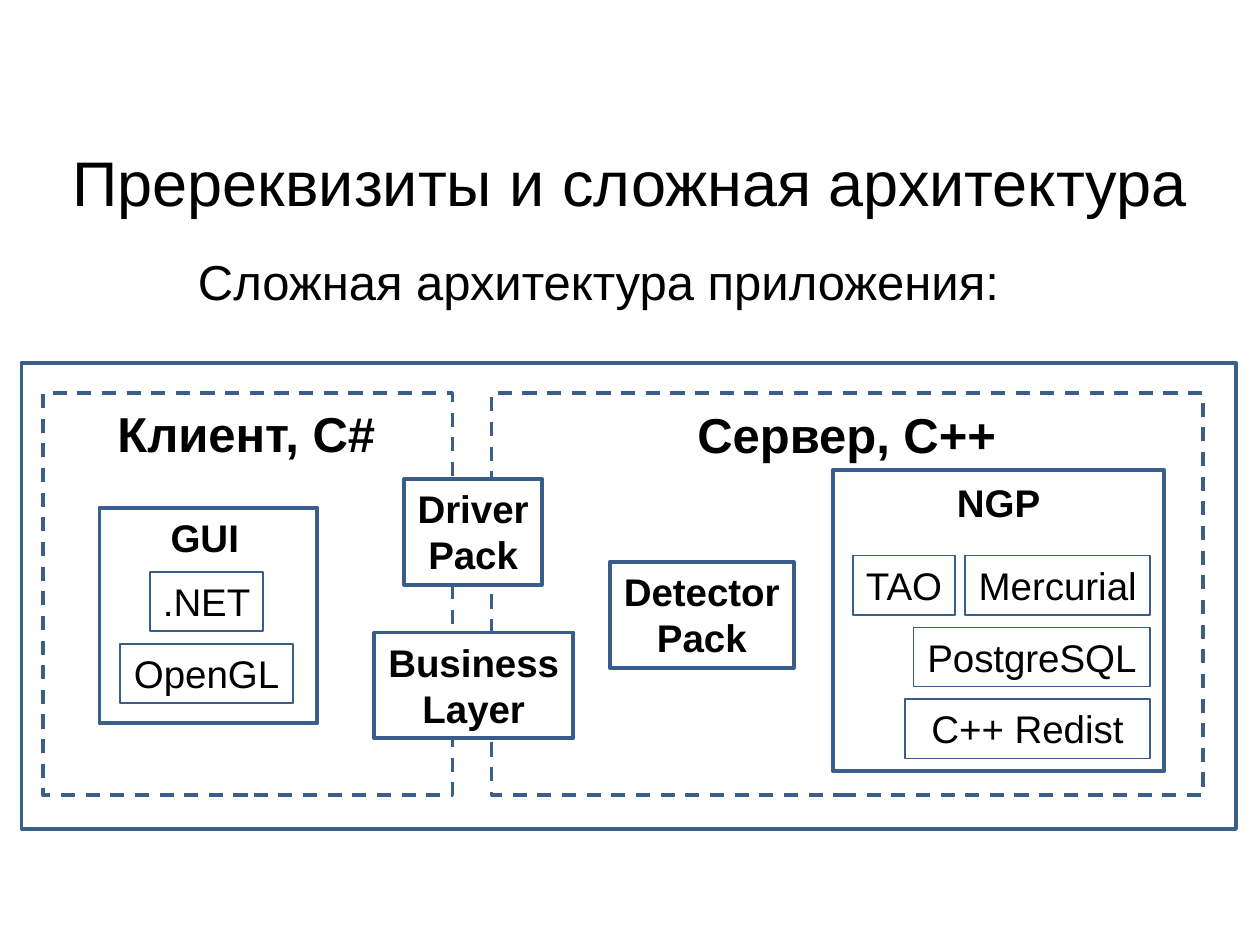
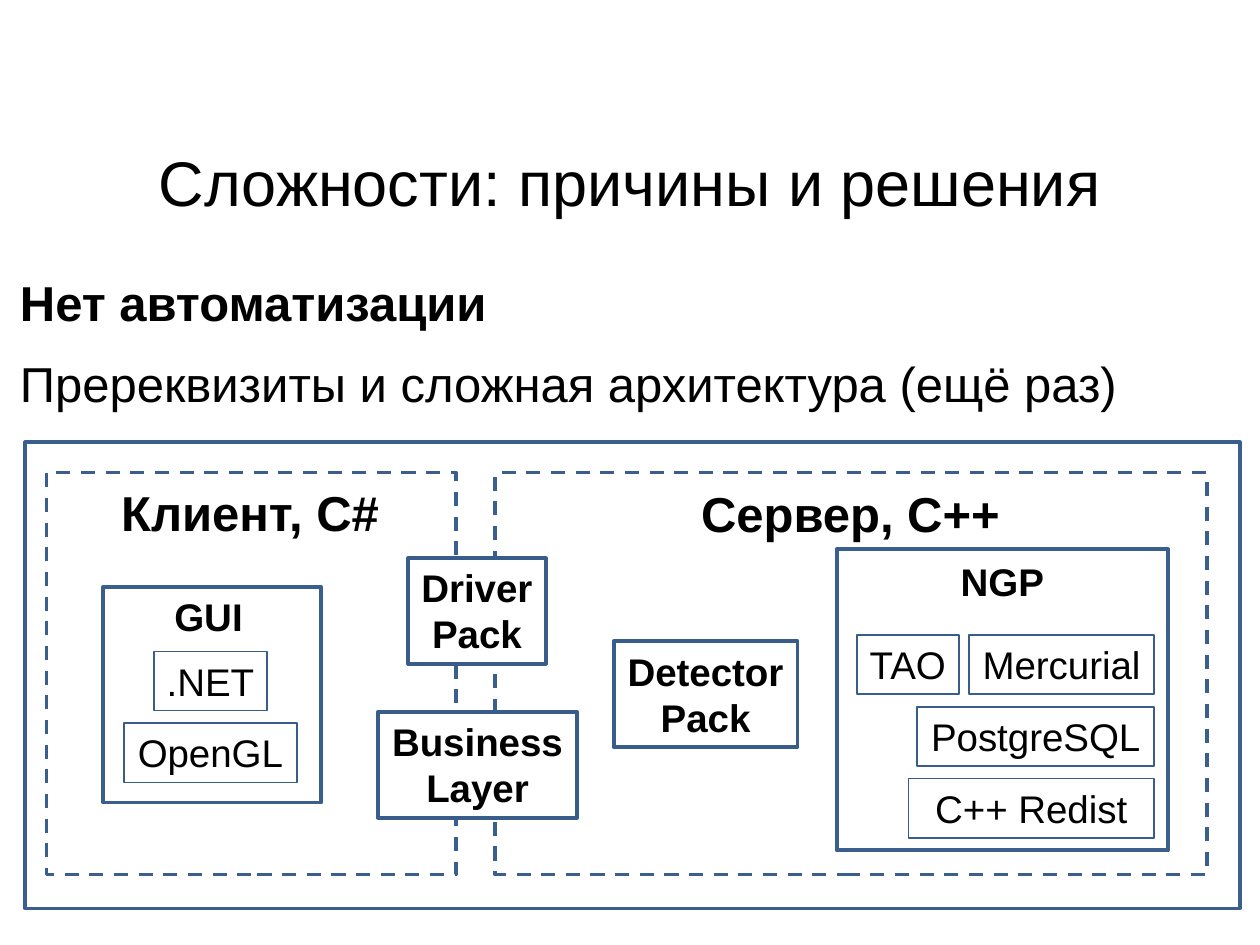
import pptx
import pptx.util
import pptx.dml.color
import pptx.enum.dml
import pptx.enum.shapes
import pptx.enum.text
from dataclasses import dataclass
from pptx.util import Inches

ALIGN = pptx.enum.text.PP_ALIGN
ANCHOR = pptx.enum.text.MSO_ANCHOR
AUTO_SIZE = pptx.enum.text.MSO_AUTO_SIZE


@dataclass(frozen=True)
class Theme:
    font: str = "Arial"
    ink: str = "000000"
    paper: str = "FFFFFF"
    panel_line: str = "3A5F8C"
    box_line: str = "385D8A"
    title_size: int = 36
    heading_size: int = 28
    label_size: int = 22
    thin: float = 1
    medium: float = 2
    thick: float = 2.25


THEME = Theme()

# Slides: body lines are (text, bold); origin is the diagram's top left corner
SLIDES = [
    {
        "title": "Пререквизиты и сложная архитектура",
        "body": [("Сложная архитектура приложения:", False)],
        "body_area": (0.22, 1.95, 9.06, 0.65),
        "align": ALIGN.CENTER, "line_spacing": 1.0, "space_after": 0,
        "origin": (0.17, 2.88),
    },
    {
        "title": "Сложности: причины и решения",
        "body": [("Нет автоматизации", True),
                 ("Пререквизиты и сложная архитектура (ещё раз)", False)],
        "body_area": (0.06, 2.02, 9.61, 5.2),
        "align": ALIGN.LEFT, "line_spacing": 1.2, "space_after": 6,
        "origin": (0.2, 3.51),
    },
]

# Architecture diagram: left, top, width, height relative to its origin
APPLICATION = (0, 0, 9.64, 3.7)
TIERS = [(0.17, 0.24, 3.25, 3.19), (3.73, 0.24, 5.65, 3.19)]
MODULE_FRAMES = [(6.44, 0.85, 2.63, 2.39), (0.62, 1.15, 1.73, 1.71)]
TIER_NAMES = [("Клиент, C#", (0.65, 0.27, 2.27, 0.57)),
              ("Сервер, C++", (5.25, 0.28, 2.6, 0.57))]
MODULE_NAMES = [("GUI", (1.08, 1.15, 0.75, 0.47)),
                ("NGP", (7.32, 0.87, 0.87, 0.47))]
COMPONENTS = [("Business\nLayer", (2.8, 2.14, 1.58, 0.84)),
              ("Driver\nPack", (3.04, 0.92, 1.09, 0.84)),
              ("Detector\nPack", (4.67, 1.58, 1.46, 0.84))]

# Prerequisites: rows of (name, width)
GUI_ROWS = [[(".NET", 0.9)], [("OpenGL", 1.37)]]
NGP_ROWS = [[("TAO", 0.81), ("Mercurial", 1.47)],
            [("PostgreSQL", 1.88)],
            [("C++ Redist", 1.95)]]
GUI_CENTRE, GUI_TOP = 1.47, 1.66
NGP_RIGHT, NGP_TOP = 8.96, 1.53
TILE_HEIGHT, ROW_PITCH, TILE_GAP = 0.47, 0.57, 0.08


def colour(code):
    return pptx.dml.color.RGBColor.from_string(code)


def add_run(paragraph, text, size, bold=False):
    run = paragraph.add_run()
    run.text = text
    run.font.name = THEME.font
    run.font.size = pptx.util.Pt(size)
    run.font.bold = bold
    run.font.color.rgb = colour(THEME.ink)


def add_lines(frame, lines, size, align):
    """Write (text, bold) lines as paragraphs and return the paragraphs."""
    paragraphs = []
    for number, (text, bold) in enumerate(lines):
        paragraph = frame.add_paragraph() if number else frame.paragraphs[0]
        paragraph.alignment = align
        add_run(paragraph, text, size, bold)
        paragraphs.append(paragraph)
    return paragraphs


def add_rectangle(slide, origin, area, line=None, width=0, filled=False):
    left, top, across, down = area
    rectangle = slide.shapes.add_shape(
        pptx.enum.shapes.MSO_SHAPE.RECTANGLE,
        Inches(origin[0] + left), Inches(origin[1] + top),
        Inches(across), Inches(down))
    rectangle.shadow.inherit = False
    if filled:
        rectangle.fill.solid()
        rectangle.fill.fore_color.rgb = colour(THEME.paper)
    else:
        rectangle.fill.background()
    if line:
        rectangle.line.color.rgb = colour(line)
        rectangle.line.width = pptx.util.Pt(width)
    else:
        rectangle.line.fill.background()
    return rectangle


def add_label(slide, origin, text, area, size=THEME.label_size, bold=True, width=0):
    line = THEME.box_line if width else None
    frame = add_rectangle(slide, origin, area, line, width, filled=True).text_frame
    frame.word_wrap = False
    frame.auto_size = AUTO_SIZE.SHAPE_TO_FIT_TEXT
    frame.vertical_anchor = ANCHOR.TOP
    add_lines(frame, [(part, bold) for part in text.split("\n")], size, ALIGN.CENTER)


def add_tiles(slide, origin, rows, top, row_left):
    """Stack rows of prerequisites; row_left gives a row's start from its width."""
    for number, row in enumerate(rows):
        row_width = sum(width for _, width in row) + TILE_GAP * (len(row) - 1)
        left = row_left(row_width)
        for name, width in row:
            area = (left, top + number * ROW_PITCH, width, TILE_HEIGHT)
            add_label(slide, origin, name, area, bold=False, width=THEME.thin)
            left += width + TILE_GAP


def add_architecture(slide, origin):
    # Dashed tiers lie under everything else
    for area in TIERS:
        tier = add_rectangle(slide, origin, area, THEME.panel_line, THEME.medium)
        tier.line.dash_style = pptx.enum.dml.MSO_LINE.DASH

    # Names and components
    for name, area in MODULE_NAMES:
        add_label(slide, origin, name, area)
    for name, area in TIER_NAMES:
        add_label(slide, origin, name, area, THEME.heading_size)
    for name, area in COMPONENTS:
        add_label(slide, origin, name, area, width=THEME.thick)

    # Prerequisites: centred in GUI, right-aligned in NGP
    add_tiles(slide, origin, GUI_ROWS, GUI_TOP, lambda width: GUI_CENTRE - width / 2)
    add_tiles(slide, origin, NGP_ROWS, NGP_TOP, lambda width: NGP_RIGHT - width)

    # Outlines
    for area in MODULE_FRAMES:
        add_rectangle(slide, origin, area, THEME.panel_line, THEME.thick)
    add_rectangle(slide, origin, APPLICATION, THEME.panel_line, THEME.medium)


def add_title(slide, text):
    title = slide.shapes.title
    title.left, title.top = Inches(0), Inches(1.09)
    title.width, title.height = Inches(10), Inches(0.7)
    title.text_frame.vertical_anchor = ANCHOR.MIDDLE
    title.text_frame.auto_size = AUTO_SIZE.NONE
    add_lines(title.text_frame, [(text, False)], THEME.title_size, ALIGN.CENTER)


def add_body(slide, content):
    body = slide.shapes.add_textbox(*map(Inches, content["body_area"]))
    body.text_frame.word_wrap = True
    for paragraph in add_lines(body.text_frame, content["body"],
                               THEME.heading_size, content["align"]):
        paragraph.line_spacing = content["line_spacing"]
        paragraph.space_after = pptx.util.Pt(content["space_after"])


def main():
    deck = pptx.Presentation()
    deck.slide_width, deck.slide_height = Inches(10), Inches(7.5)
    title_only = deck.slide_layouts[5]
    for content in SLIDES:
        slide = deck.slides.add_slide(title_only)
        add_title(slide, content["title"])
        add_body(slide, content)
        add_architecture(slide, content["origin"])
    deck.save("out.pptx")


if __name__ == "__main__":
    main()
